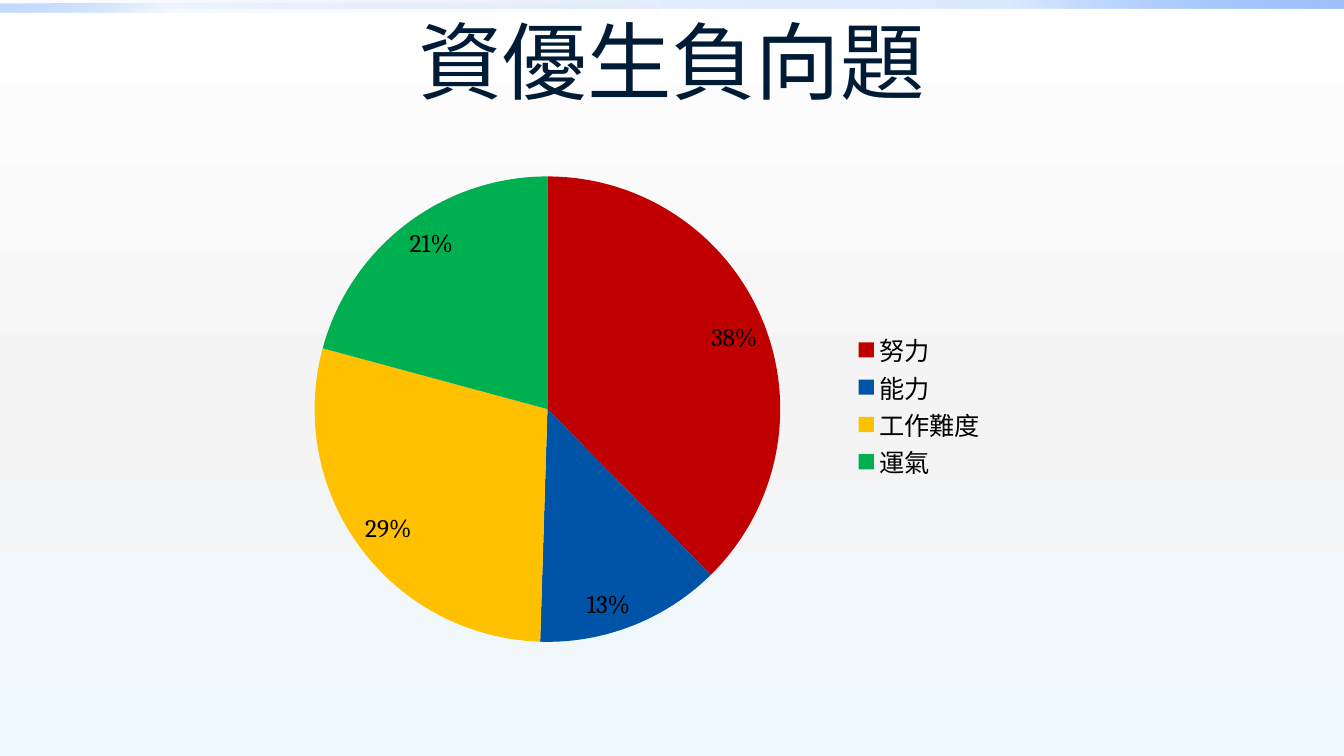
from pptx import Presentation
from pptx import util as u
from pptx.chart.data import CategoryChartData
from pptx.dml.color import RGBColor
from pptx.enum import chart as charts, shapes, text
from pptx.oxml.ns import qn
from lxml import etree

TITLE = "資優生負向題"
# cause, percent, slice colour
CAUSES = [
    ("努力", 38, "C00000"),
    ("能力", 13, "0054A8"),
    ("工作難度", 29, "FFC000"),
    ("運氣", 21, "00B050"),
]
THEME = {
    "title_font": "Noto Sans CJK SC", "title_size": 60.3, "title_color": "001B36",
    "chart_font": "Cambria", "chart_size": 18, "chart_color": "000000",
    # gradient stops: position %, colour, opacity %
    "background": ([(0, "FFFFFF", 100), (55, "F4F4F4", 100), (100, "EEF9FF", 100)], 90),
}
# left, top, width, height, gradient stops, angle
TOP_BARS = [
    (0, 0, 13.33, 0.08, [(0, "0058B7", 0), (75, "4F95FF", 20), (100, "9EC2FF", 100)], 315),
    (0, 0.04, 6.67, 0.08, [(0, "0058B7", 0), (75, "4F95FF", 5), (100, "9EC2FF", 60)], 135),
]
TITLE_BOX = (0.66, 0.02, 12, 1.15)
CHART_BOX = (0.66, 1.75, 12, 4.95)
# fractions of the chart
PLOT_AREA = {"x": 0.205, "y": 0, "w": 0.385, "h": 0.933}
LEGEND_AREA = {"x": 0.64, "y": 0.31, "w": 0.13, "h": 0.3}


def inches(box):
    return [u.Inches(length) for length in box]


def set_gradient(fill, element, stops, angle):
    """Give the fill found inside element a gradient with opacity per stop."""
    fill.solid()
    solid = next(element.iter(qn("a:solidFill")))
    gradient = etree.Element(qn("a:gradFill"), rotWithShape="1")
    stop_list = etree.SubElement(gradient, qn("a:gsLst"))
    for position, color, opacity in stops:
        stop = etree.SubElement(stop_list, qn("a:gs"), pos=str(position * 1000))
        rgb = etree.SubElement(stop, qn("a:srgbClr"), val=color)
        etree.SubElement(rgb, qn("a:alpha"), val=str(opacity * 1000))
    etree.SubElement(gradient, qn("a:lin"), ang=str(angle * 60000), scaled="0")
    solid.getparent().replace(solid, gradient)


def style_font(font, role):
    font.name = THEME[role + "_font"]
    font.size = u.Pt(THEME[role + "_size"])
    font.color.rgb = RGBColor.from_string(THEME[role + "_color"])


def add_top_bars(slide):
    for *box, stops, angle in TOP_BARS:
        bar = slide.shapes.add_shape(shapes.MSO_SHAPE.RECTANGLE, *inches(box))
        bar.shadow.inherit = False
        set_gradient(bar.fill, bar.element, stops, angle)
        bar.line.fill.background()


def add_title(slide):
    box = slide.shapes.add_textbox(*inches(TITLE_BOX))
    frame = box.text_frame
    frame.word_wrap = True
    frame.margin_top = frame.margin_bottom = 0
    frame.vertical_anchor = text.MSO_ANCHOR.MIDDLE
    paragraph = frame.paragraphs[0]
    paragraph.alignment = text.PP_ALIGN.CENTER
    run = paragraph.add_run()
    run.text = TITLE
    style_font(run.font, "title")
    run_properties = next(box.element.iter(qn("a:rPr")))
    etree.SubElement(run_properties, qn("a:ea"), typeface=THEME["title_font"])


def set_layout(part, area, index, target=None):
    """Fix a chart part at an area; its layout element goes at index."""
    for old in part.findall(qn("c:layout")):
        part.remove(old)
    layout = etree.Element(qn("c:layout"))
    manual = etree.SubElement(layout, qn("c:manualLayout"))
    if target:
        etree.SubElement(manual, qn("c:layoutTarget"), val=target)
    for side in "xy":
        etree.SubElement(manual, qn(f"c:{side}Mode"), val="edge")
    for side, fraction in area.items():
        etree.SubElement(manual, qn(f"c:{side}"), val=str(fraction))
    part.insert(index, layout)


def add_pie(slide):
    data = CategoryChartData()
    data.categories = [name for name, _, _ in CAUSES]
    data.add_series("Series 1", [percent for _, percent, _ in CAUSES])
    chart = slide.shapes.add_chart(
        charts.XL_CHART_TYPE.PIE, *inches(CHART_BOX), data).chart
    style_font(chart.font, "chart")
    chart.has_title = False
    chart.has_legend = True
    chart.legend.position = charts.XL_LEGEND_POSITION.RIGHT
    chart.legend.include_in_layout = False
    set_layout(next(chart.element.iter(qn("c:plotArea"))), PLOT_AREA, 0, "inner")
    set_layout(next(chart.element.iter(qn("c:legend"))), LEGEND_AREA, 1)

    plot = chart.plots[0]
    plot.vary_by_categories = True
    for index, (_, _, color) in enumerate(CAUSES):
        fill = plot.series[0].points[index].format.fill
        fill.solid()
        fill.fore_color.rgb = RGBColor.from_string(color)
    plot.has_data_labels = True
    labels = plot.data_labels
    labels.show_percentage = True
    labels.show_value = False
    labels.number_format = "0%"
    labels.number_format_is_linked = False
    labels.position = charts.XL_LABEL_POSITION.INSIDE_END
    style_font(labels.font, "chart")


def main():
    presentation = Presentation()
    presentation.slide_width = u.Inches(13.33)
    presentation.slide_height = u.Inches(7.5)
    slide = presentation.slides.add_slide(presentation.slide_layouts[6])
    set_gradient(slide.background.fill, slide.element, *THEME["background"])
    add_top_bars(slide)
    add_title(slide)
    add_pie(slide)
    presentation.save("out.pptx")


if __name__ == "__main__":
    main()
